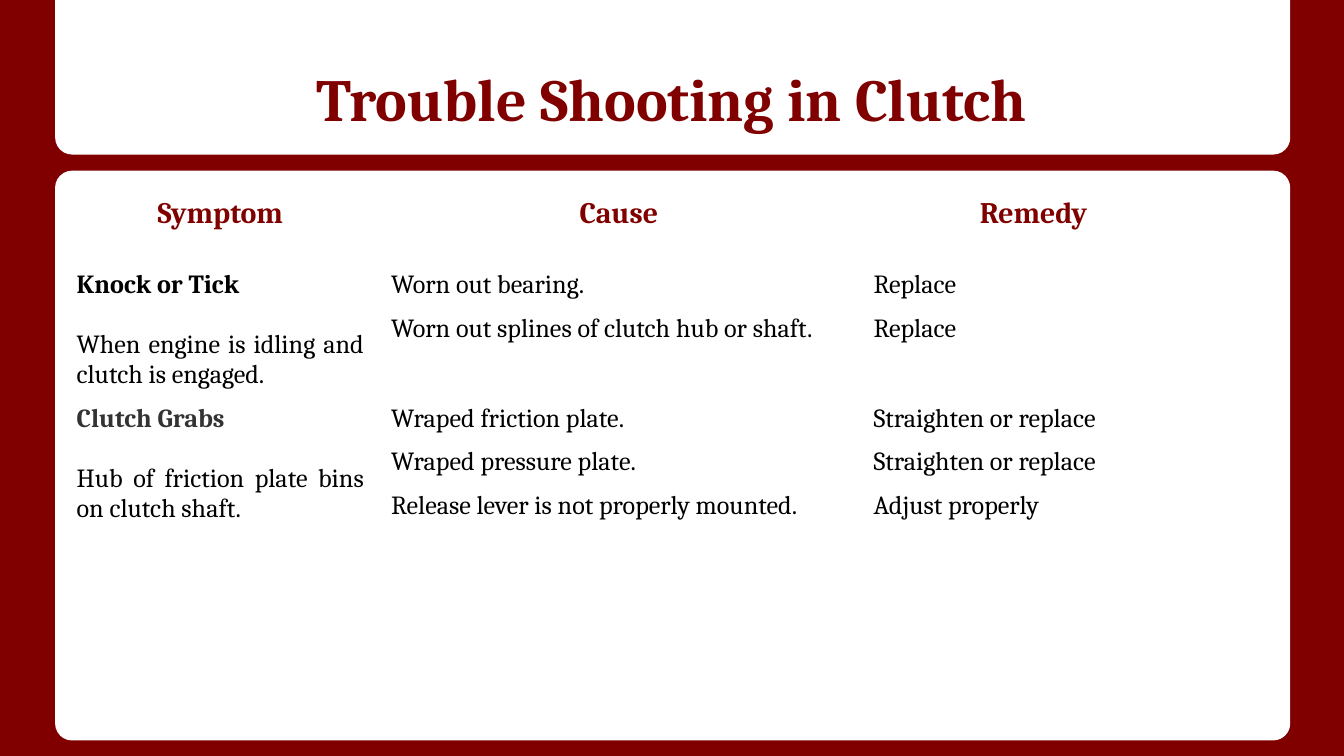
from pptx import Presentation
from pptx.dml.color import RGBColor
from pptx.enum import shapes, text
from pptx.util import Inches, Pt

INK = {"red": "800000", "white": "FFFFFF", "black": "000000", "gray": "333333"}
FONT = "Cambria"
TITLE = "Trouble Shooting in Clutch"
HEADS = ["Symptom", "Cause", "Remedy"]
FAULTS = [
    ("Knock or Tick", "black", "When engine is idling and clutch is engaged.", [
        ("Worn out bearing.", "Replace "),
        ("Worn out splines of clutch hub or shaft.", "Replace "),
    ]),
    ("Clutch Grabs", "gray", "Hub of friction plate bins on clutch shaft.", [
        ("Wraped friction plate.", "Straighten or replace"),
        ("Wraped pressure plate.", "Straighten or replace"),
        ("Release lever is not properly mounted.", "Adjust properly"),
    ]),
]
COLS = [2.34, 3.59, 2.58]
ROWS = [0.55, 0.32, 0.67, 0.32, 0.32, 0.35]
ALIGN = text.PP_ALIGN
KIND = shapes.MSO_SHAPE


def color(name):
    return RGBColor.from_string(INK[name])


def write(para, words, size, ink="black", bold=False, align=ALIGN.JUSTIFY):
    para.alignment = align
    run = para.add_run()
    run.text = words
    font = run.font
    font.name, font.size, font.bold = FONT, Pt(size), bold
    font.color.rgb = color(ink)


def panel(slide, kind, top, high, curve):
    box = slide.shapes.add_shape(kind, Inches(0.41), Inches(top), Inches(9.19), Inches(high))
    box.adjustments[0] = curve
    box.shadow.inherit = False
    box.fill.solid()
    box.fill.fore_color.rgb = color("white")
    box.line.fill.background()
    return box


def head(slide):
    title = slide.shapes.title
    title.left, title.top = Inches(0.5), Inches(0.15)
    title.width, title.height = Inches(9), Inches(0.94)
    frame = title.text_frame
    frame.margin_left = frame.margin_right = Inches(0.1)
    frame.margin_top = frame.margin_bottom = Inches(0.1)
    frame.vertical_anchor = text.MSO_ANCHOR.BOTTOM
    write(frame.paragraphs[0], TITLE, 32, "red", True, ALIGN.CENTER)
    slide.shapes._spTree.append(title._element)


def grid(slide):
    frame = slide.shapes.add_table(len(ROWS), len(COLS), Inches(0.47), Inches(1.41),
                                   Inches(sum(COLS)), Inches(sum(ROWS)))
    table = frame.table
    table.first_row = table.horz_banding = False
    for col, wide in zip(table.columns, COLS):
        col.width = Inches(wide)
    for row, high in zip(table.rows, ROWS):
        row.height = Inches(high)
    for cell in table.iter_cells():
        cell.fill.background()

    for col, words in enumerate(HEADS):
        para = table.cell(0, col).text_frame.paragraphs[0]
        write(para, words, 16, "red", True, ALIGN.CENTER)

    top = 1
    for name, ink, note, pairs in FAULTS:
        cell = table.cell(top, 0)
        cell.merge(table.cell(top + len(pairs) - 1, 0))
        body = cell.text_frame
        write(body.paragraphs[0], name, 14, ink, True)
        body.paragraphs[0].space_after = Pt(16)
        write(body.add_paragraph(), note, 14)
        for row, pair in enumerate(pairs, top):
            for col, words in enumerate(pair, 1):
                write(table.cell(row, col).text_frame.paragraphs[0], words, 14)
        top += len(pairs)


def main():
    deck = Presentation()
    deck.slide_width = Inches(10)
    deck.slide_height = deck.slide_width * 9 // 16
    slide = deck.slides.add_slide(deck.slide_layouts[5])
    slide.background.fill.solid()
    slide.background.fill.fore_color.rgb = color("red")
    panel(slide, KIND.ROUNDED_RECTANGLE, 1.27, 4.24, 0.03)
    panel(slide, KIND.ROUND_2_SAME_RECTANGLE, 0, 1.15, 0.11).rotation = 180
    head(slide)
    grid(slide)
    deck.save("out.pptx")


if __name__ == "__main__":
    main()
